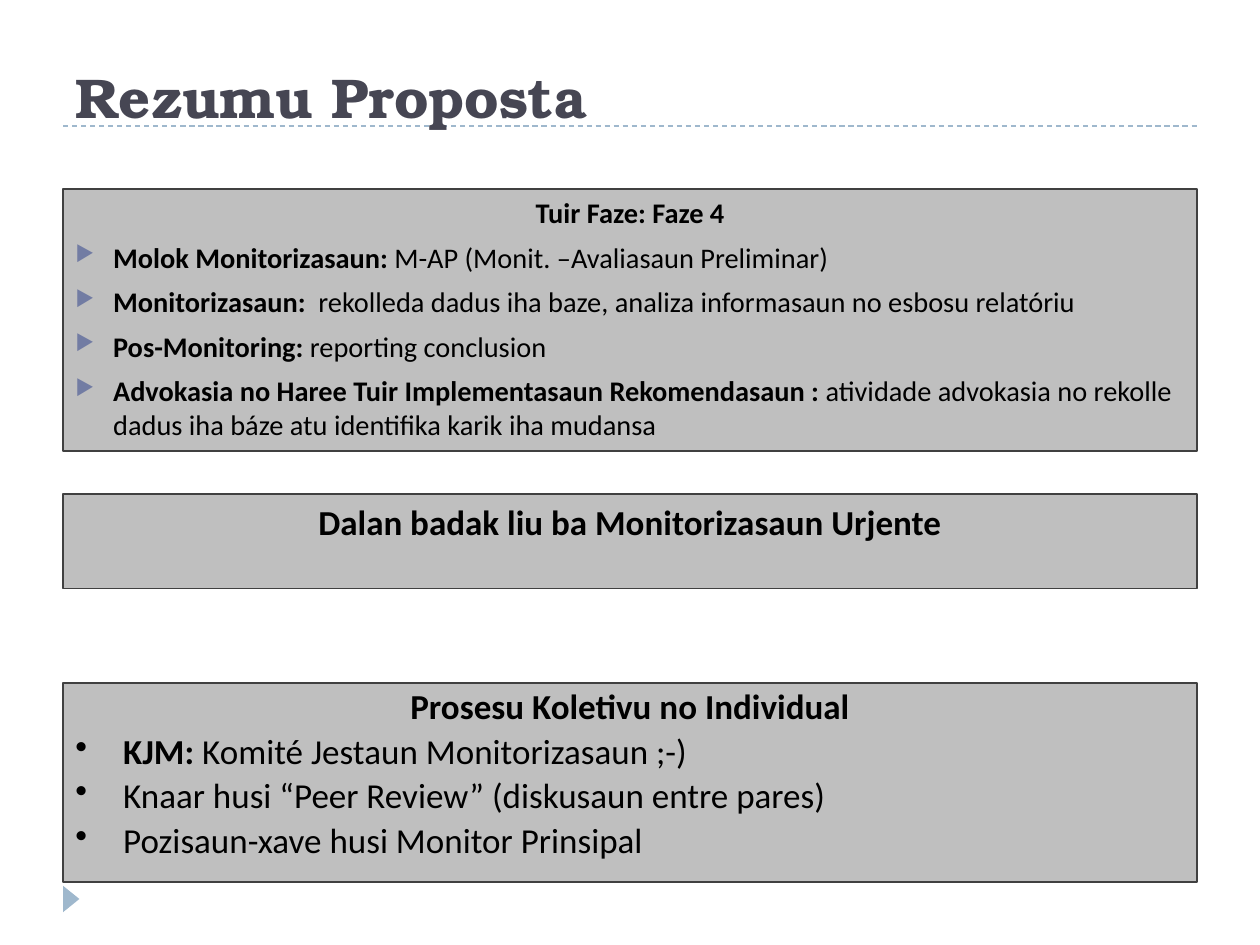
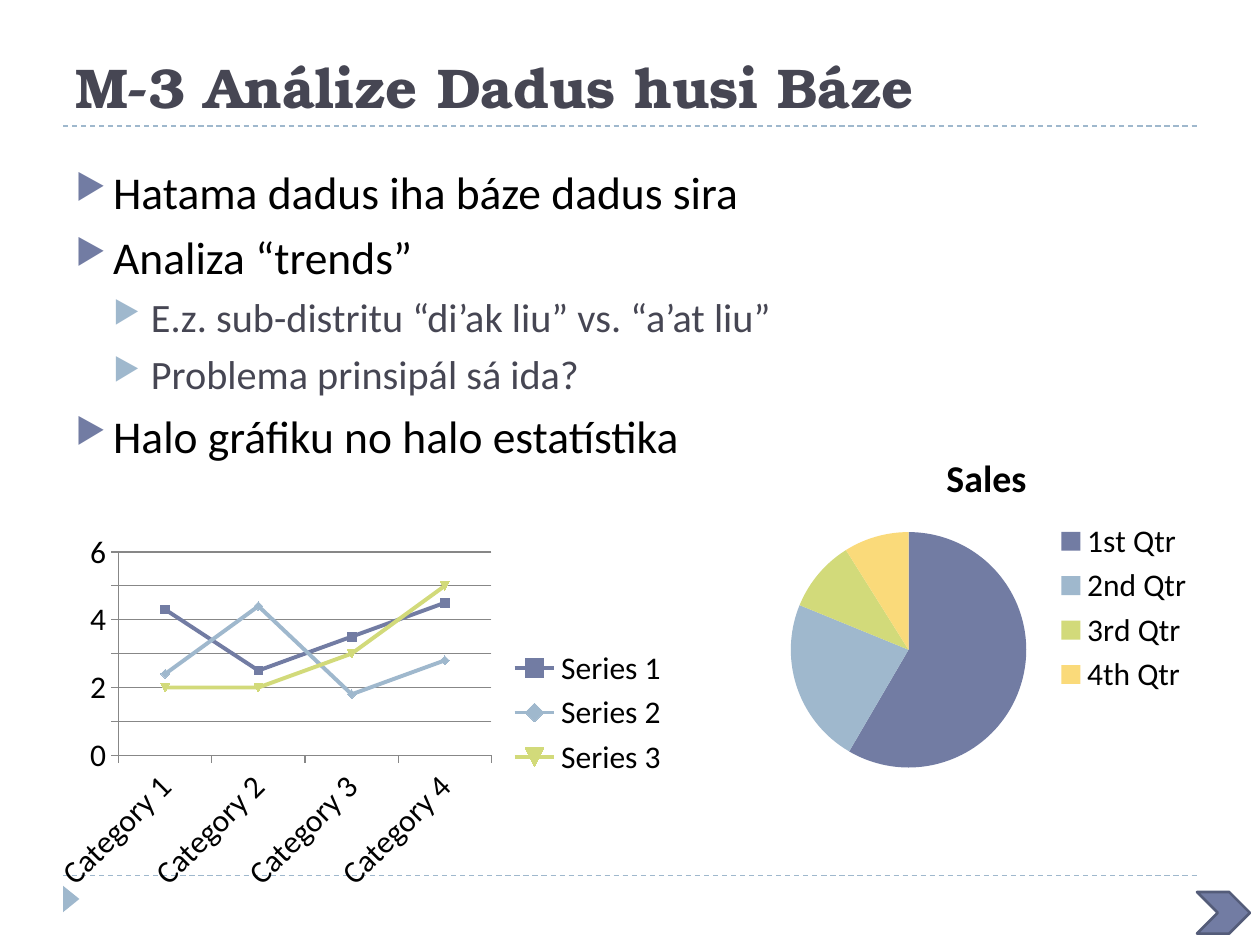
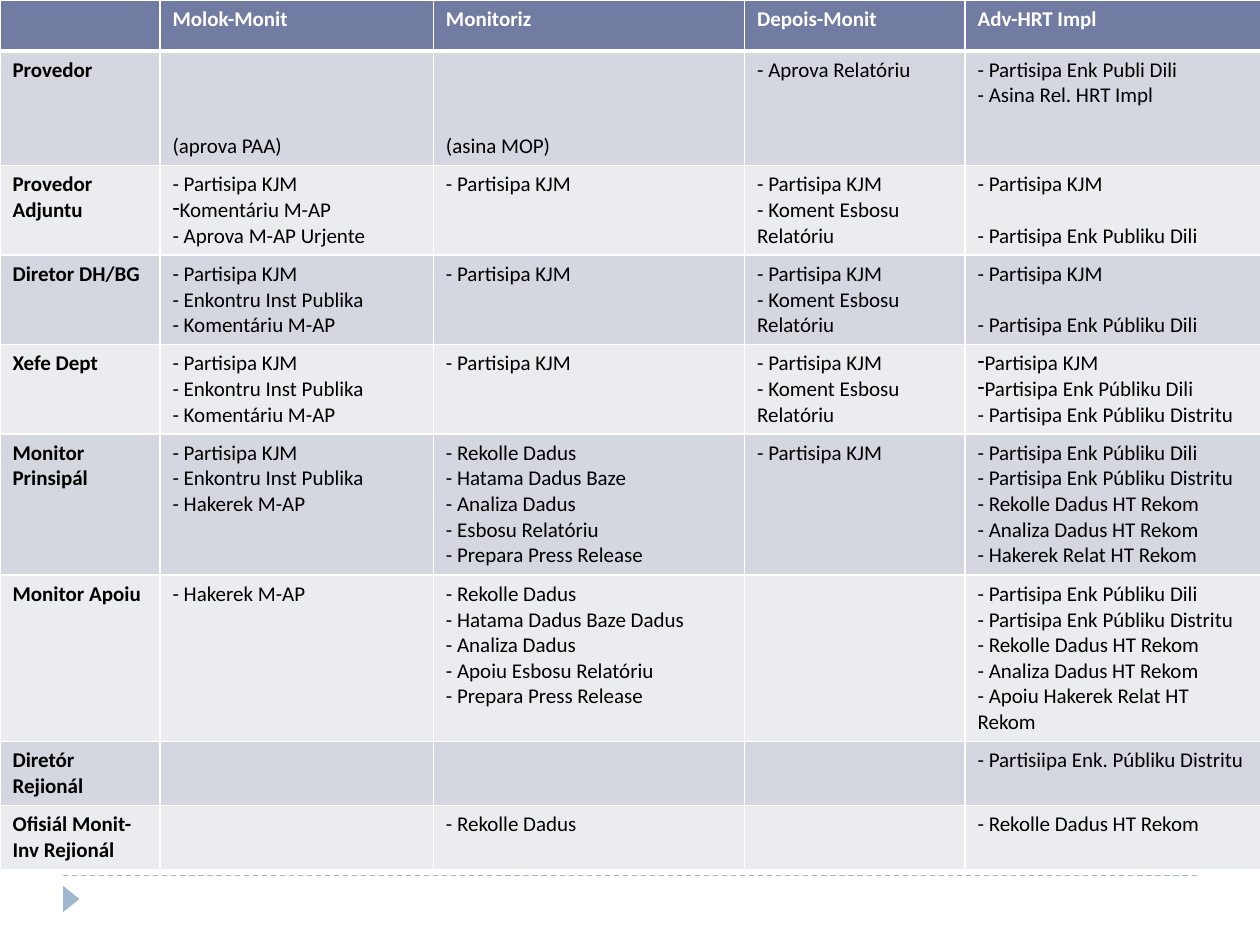
"""Build three slides on a monitoring proposal: summary, data charts and role table."""
from lxml import etree
from pptx import Presentation
from pptx.chart.data import CategoryChartData
from pptx.dml.color import RGBColor
from pptx.enum.chart import XL_CHART_TYPE, XL_LEGEND_POSITION
from pptx.enum.dml import MSO_LINE
from pptx.enum.shapes import MSO_CONNECTOR, MSO_SHAPE
from pptx.enum.text import MSO_ANCHOR
from pptx.oxml.ns import qn
from pptx.util import Inches, Pt

STRAIGHT = MSO_CONNECTOR.STRAIGHT
RECT, ARROW, CHEVRON = MSO_SHAPE.RECTANGLE, MSO_SHAPE.ISOSCELES_TRIANGLE, MSO_SHAPE.CHEVRON
TOP, BOTTOM = MSO_ANCHOR.TOP, MSO_ANCHOR.BOTTOM
LINE, PIE = XL_CHART_TYPE.LINE_MARKERS, XL_CHART_TYPE.PIE
RIGHT = XL_LEGEND_POSITION.RIGHT
DASH = MSO_LINE.DASH


class Theme:
    black, white, ink = "000000", "FFFFFF", "464653"
    slate, sky, lime, sand = "727CA3", "9FB8CD", "D2DA7A", "FADA7A"
    rim, panel, edge, grid = "545C79", "BFBFBF", "404040", "878787"
    bands = ("EBECF0", "D5D7E0")
    serif, sans = "TeX Gyre Bonum", "Calibri"
    title, large, sub, key, small, cell = 32, 26, 23, 20, 16.2, 12
    chart, head = 18, 21.6


HEAD = {"size": Theme.title, "color": Theme.ink, "font": Theme.serif}
PHASE = {"size": Theme.small, "left": 0.3, "hang": 0.3, "para": {"space_before": Pt(6)}}
MARK = {"bullet": "▶", "tint": Theme.slate, "scale": 76}
STEP = {**PHASE, **MARK}
POINT = {**STEP, "size": Theme.large}
DETAIL = {**POINT, "size": Theme.sub, "color": Theme.ink, "tint": Theme.sky,
          "left": 0.6, "para": {"space_before": Pt(5), "level": 1}}
KEY = {"size": Theme.key, "left": 0.38, "hang": 0.38, "para": {"space_before": Pt(4)}}
GROUP = {**KEY, "para": {"space_before": Pt(4), "line_spacing": 0.9}}
ITEM = {**GROUP, "bullet": "•"}
CELL = {"size": Theme.cell}


def write(frame, lines, anchor=TOP):
    """Fill a frame with (text, form) lines; asterisks enclose bold words."""
    frame.word_wrap, frame.vertical_anchor = True, anchor
    for num, (text, form) in enumerate(lines):
        para = frame.add_paragraph() if num else frame.paragraphs[0]
        for name, value in form.get("para", {}).items():
            setattr(para, name, value)
        props = para._p.get_or_add_pPr()
        if "left" in form:
            props.set("marL", str(Inches(form["left"])))
            props.set("indent", str(-Inches(form["hang"])))
        if "tint" in form:
            tint = etree.SubElement(props, qn("a:buClr"))
            etree.SubElement(tint, qn("a:srgbClr"), val=form["tint"])
            etree.SubElement(props, qn("a:buSzPct"), val=str(form["scale"] * 1000))
        if "bullet" in form:
            etree.SubElement(props, qn("a:buChar"), char=form["bullet"])
        for part, words in enumerate(text.split("*")):
            if words:
                run = para.add_run()
                run.text = words
                values = {"size": Pt(form["size"]), "bold": part % 2 == 1,
                          "name": form.get("font", Theme.sans)}
                for name, value in values.items():
                    setattr(run.font, name, value)
                run.font.color.rgb = RGBColor.from_string(form.get("color", Theme.black))


def draw(slide, kind, place, fill, edge=None, width=0.75):
    """Add a flat preset shape."""
    shape = slide.shapes.add_shape(kind, *map(Inches, place))
    shape.shadow.inherit = False
    shape.fill.solid()
    shape.fill.fore_color.rgb = RGBColor.from_string(fill)
    if edge:
        shape.line.color.rgb = RGBColor.from_string(edge)
        shape.line.width = Pt(width)
    else:
        shape.line.fill.background()
    return shape


deck = Presentation()
deck.slide_width, deck.slide_height = Inches(10), Inches(7.5)

frames = [
    ("Rezumu Proposta", 0.08, [1]),
    ("M-3 Análize Dadus husi Báze", 0, [1, 6.95]),
    (None, 0, [6.95]),
]
for title, top, rules in frames:
    slide = deck.slides.add_slide(deck.slide_layouts[6])
    for y in rules:
        rule = slide.shapes.add_connector(STRAIGHT, *map(Inches, (0.5, y, 9.5, y)))
        rule.line.color.rgb = RGBColor.from_string(Theme.sky)
        rule.line.width, rule.line.dash_style = Pt(0.75), DASH
        etree.SubElement(rule._element.spPr, qn("a:effectLst"))
    draw(slide, ARROW, (0.46, 7.07, 0.21, 0.13), Theme.sky).rotation = 90
    if title:
        box = slide.shapes.add_textbox(*map(Inches, (0.5, top, 9, 1)))
        write(box.text_frame, [(f"*{title}*", HEAD)], BOTTOM)
plan, data, roles = deck.slides

panels = [
    (1.5, 2.08, [
        ("*Tuir Faze: Faze 4*", PHASE),
        ("*Molok Monitorizasaun: *M-AP (Monit. –Avaliasaun Preliminar)", STEP),
        ("*Monitorizasaun:  *rekolleda dadus iha baze, analiza informasaun no esbosu relatóriu",
         STEP),
        ("*Pos-Monitoring: *reporting conclusion", STEP),
        ("*Advokasia no Haree Tuir Implementasaun Rekomendasaun : *atividade advokasia "
         "no rekolle dadus iha báze atu identifika karik iha mudansa", STEP),
    ]),
    (5.42, 1.58, [
        ("*Prosesu Koletivu no Individual*", GROUP),
        ("*KJM: *Komité Jestaun Monitorizasaun ;-)", ITEM),
        ("Knaar husi “Peer Review” (diskusaun entre pares)", ITEM),
        ("Pozisaun-xave husi Monitor Prinsipal", ITEM),
    ]),
    (3.92, 0.75, [("*Dalan badak liu ba Monitorizasaun Urjente*", KEY)]),
]
for top, height, lines in panels:
    panel = draw(plan, RECT, (0.5, top, 9, height), Theme.panel, Theme.edge)
    write(panel.text_frame, lines)

body = data.shapes.add_textbox(*map(Inches, (0.5, 1.25, 9, 5.48)))
write(body.text_frame, [
    ("Hatama dadus iha báze dadus sira", POINT),
    ("Analiza “trends”", POINT),
    ("E.z. sub-distritu “di’ak liu” vs. “a’at liu”", DETAIL),
    ("Problema prinsipál sá ida?", DETAIL),
    ("Halo gráfiku no halo estatístika", POINT),
])

hues = [RGBColor.from_string(hue)
        for hue in (Theme.slate, Theme.sky, Theme.lime, Theme.sand)]
charts = [
    (PIE, (6.08, 3.42, 3.5, 2.81), ["1st Qtr", "2nd Qtr", "3rd Qtr", "4th Qtr"],
     {"Sales": (59, 23, 10, 9)}),
    (LINE, (0.33, 4.17, 5.08, 2.97), [f"Category {num}" for num in range(1, 5)],
     {"Series 1": (4.3, 2.5, 3.5, 4.5), "Series 2": (2.4, 4.4, 1.8, 2.8),
      "Series 3": (2, 2, 3, 5)}),
]
for kind, place, names, series in charts:
    source = CategoryChartData()
    source.categories = names
    for name, values in series.items():
        source.add_series(name, values)
    chart = data.shapes.add_chart(kind, *map(Inches, place), source).chart
    chart.font.size, chart.font.name = Pt(Theme.chart), Theme.sans
    chart.font.color.rgb = RGBColor.from_string(Theme.black)
    chart.has_legend = True
    chart.legend.position, chart.legend.include_in_layout = RIGHT, False
    plot = chart.plots[0]
    plot.vary_by_categories = kind == PIE
    chart.has_title = kind == PIE
    if kind == PIE:
        write(chart.chart_title.text_frame, [("*Sales*", {"size": Theme.head})])
        for num, hue in enumerate(hues):
            fill = plot.series[0].points[num].format.fill
            fill.solid()
            fill.fore_color.rgb = hue
    else:
        for line, hue in zip(plot.series, hues):
            line.smooth = False
            line.format.line.width = Pt(2.25)
            line.format.line.color.rgb = hue
            line.marker.format.fill.solid()
            line.marker.format.fill.fore_color.rgb = hue
            line.marker.format.line.color.rgb = hue
        scale = {"minimum_scale": 0, "maximum_scale": 6, "major_unit": 1,
                 "has_major_gridlines": True}
        for name, value in scale.items():
            setattr(chart.value_axis, name, value)
        for part in (chart.value_axis, chart.category_axis, chart.value_axis.major_gridlines):
            part.format.line.color.rgb = RGBColor.from_string(Theme.grid)
            part.format.line.width = Pt(0.75)
draw(data, CHEVRON, (9.5, 7.08, 0.42, 0.33), Theme.slate, Theme.rim, 1.5)

join = "- Partisipa KJM"
draft = join + "\n- Koment Esbosu Relatóriu"
meet = join + "\n- Enkontru Inst Publika\n"
public = "- Partisipa Enk Públiku Dili"
local = public + "\n- Partisipa Enk Públiku Distritu"
follow = local + "\n- Rekolle Dadus HT Rekom\n- Analiza Dadus HT Rekom\n"
rows = [
    ("", "Molok-Monit", "Monitoriz", "Depois-Monit", "Adv-HRT Impl"),
    ("Provedor", "(aprova PAA)", "(asina MOP)", "- Aprova Relatóriu",
     "- Partisipa Enk Publi Dili\n- Asina Rel. HRT Impl"),
    ("Provedor Adjuntu", join + "\n-Komentáriu M-AP\n- Aprova M-AP Urjente", join, draft,
     join + "\n\n- Partisipa Enk Publiku Dili"),
    ("Diretor DH/BG", meet + "- Komentáriu M-AP", join, draft, join + "\n\n" + public),
    ("Xefe Dept", meet + "- Komentáriu M-AP", join, draft,
     "-Partisipa KJM\n-Partisipa Enk Públiku Dili\n- Partisipa Enk Públiku Distritu"),
    ("Monitor Prinsipál", meet + "- Hakerek M-AP",
     "- Rekolle Dadus\n- Hatama Dadus Baze\n- Analiza Dadus\n- Esbosu Relatóriu\n"
     "- Prepara Press Release", join, follow + "- Hakerek Relat HT Rekom"),
    ("Monitor Apoiu", "- Hakerek M-AP",
     "- Rekolle Dadus\n- Hatama Dadus Baze Dadus\n- Analiza Dadus\n"
     "- Apoiu Esbosu Relatóriu\n- Prepara Press Release", "",
     follow + "- Apoiu Hakerek Relat HT Rekom"),
    ("Diretór Rejionál", "", "", "", "- Partisiipa Enk. Públiku Distritu"),
    ("Ofisiál Monit-Inv Rejionál", "", "- Rekolle Dadus", "", "- Rekolle Dadus HT Rekom"),
]
widths = (1.27, 2.17, 2.47, 1.75, 2.35)
heights = (0.4, 0.91, 0.71, 0.71, 0.71, 1.12, 1.32, 0.51, 0.5)
table = roles.shapes.add_table(len(rows), len(widths), 0, 0, Inches(10), Inches(6.89)).table
for col, width in zip(table.columns, widths):
    col.width = Inches(width)
for row, height in zip(table.rows, heights):
    row.height = Inches(height)
for r, row in enumerate(rows):
    for c, text in enumerate(row):
        cell = table.cell(r, c)
        props = cell._tc.get_or_add_tcPr()
        for side in "LRTB":
            thick = 3 if (r, side) in ((0, "B"), (1, "T")) else 1
            edge = etree.SubElement(props, qn(f"a:ln{side}"), w=str(Pt(thick)))
            fill = etree.SubElement(edge, qn("a:solidFill"))
            etree.SubElement(fill, qn("a:srgbClr"), val=Theme.white)
        cell.fill.solid()
        cell.fill.fore_color.rgb = RGBColor.from_string(Theme.bands[r % 2] if r else Theme.slate)
        lines, gap = [], False
        for line in text.split("\n") if text else []:
            form = {**CELL, "color": Theme.black if r else Theme.white}
            if gap:
                form["para"] = {"space_before": Pt(14.65)}
            if line.startswith("-") and line[1] != " ":
                form["bullet"], line = "-", line[1:]
            if r == 0 or c == 0:
                line = f"*{line}*"
            gap = not line
            if line:
                lines.append((line, form))
        if lines:
            write(cell.text_frame, lines)
        cell.vertical_anchor = BOTTOM if text.startswith("(") else TOP

deck.save("out.pptx")
